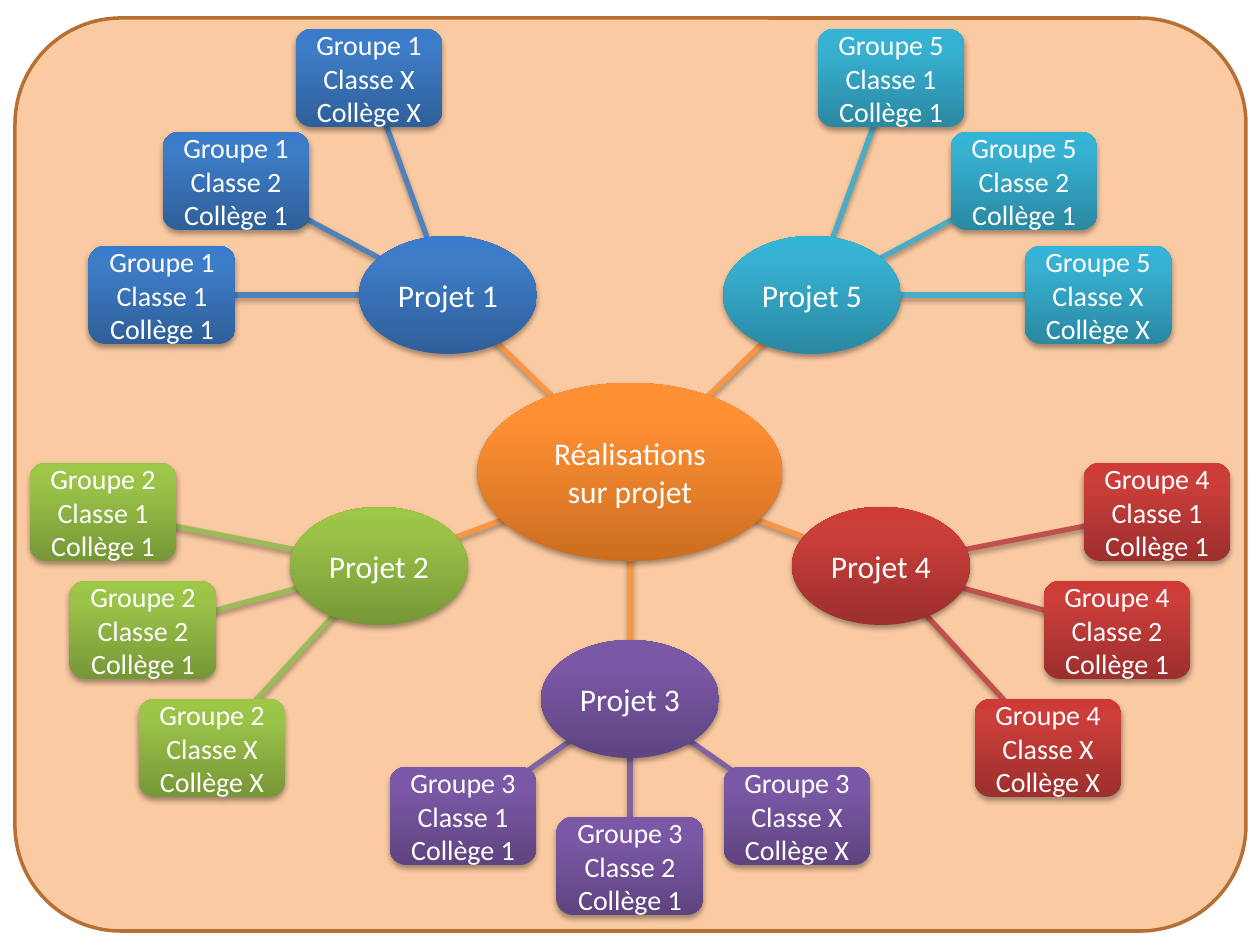
from copy import deepcopy
from lxml.etree import SubElement
from pptx import Presentation
from pptx.dml.color import RGBColor as RGB
from pptx.enum.shapes import MSO_CONNECTOR as LINK, MSO_SHAPE as FORM
from pptx.enum.text import MSO_ANCHOR as ANCHOR, PP_ALIGN as ALIGN
from pptx.oxml.ns import qn
from pptx.util import Pt

PX = 914400 / 126
WIDE, HIGH = 1260, 945
WHITE = RGB(0xFF, 0xFF, 0xFF)
PEACH = RGB(0xF7, 0x96, 0x46)
BROWN = RGB(0xB7, 0x6F, 0x34)
BLUE = (RGB(0x4F, 0x81, 0xBD), RGB(0x2F, 0x5F, 0x99), RGB(0x3D, 0x7C, 0xC7), RGB(0x3A, 0x7C, 0xCB))
GREEN = (RGB(0x9B, 0xBB, 0x59), RGB(0x77, 0x97, 0x37), RGB(0x9B, 0xC3, 0x48), RGB(0x9D, 0xC7, 0x46))
PURPLE = (RGB(0x80, 0x64, 0xA2), RGB(0x5F, 0x44, 0x80), RGB(0x7B, 0x58, 0xA6), RGB(0x7C, 0x57, 0xA8))
RED = (RGB(0xC0, 0x50, 0x4D), RGB(0x9C, 0x2F, 0x2D), RGB(0xCB, 0x3E, 0x3A), RGB(0xCE, 0x3B, 0x37))
TEAL = (RGB(0x4B, 0xAC, 0xC6), RGB(0x2A, 0x88, 0xA2), RGB(0x37, 0xB1, 0xD2), RGB(0x34, 0xB4, 0xD6))
ORANGE = (PEACH, RGB(0xCC, 0x6E, 0x20), RGB(0xFF, 0x90, 0x34), RGB(0xFF, 0x91, 0x36))

HUB = (630, 472)
TOP = [(369, 78), (236, 181), (162, 295)]
SIDE = [(103, 512), (143, 630), (212, 748)]
BASE = [(463, 816), (630, 866), (797, 816)]
PROJECTS = [
    (1, (448, 295), BLUE, TOP, "X21"),
    (2, (379, 566), GREEN, SIDE, "12X"),
    (3, (630, 699), PURPLE, BASE, "12X"),
    (4, (881, 566), RED, [(WIDE - x, y) for x, y in SIDE], "12X"),
    (5, (812, 295), TEAL, [(WIDE - x, y) for x, y in TOP], "12X"),
]

deck = Presentation()
deck.slide_width, deck.slide_height = int(WIDE * PX), int(HIGH * PX)
slide = deck.slides.add_slide(deck.slide_layouts[6])
shapes = slide.shapes


def cast(item):
    effects = SubElement(item._element.spPr, qn("a:effectLst"))
    shade = SubElement(effects, qn("a:outerShdw"), blurRad="40000", dist="23000",
                       dir="5400000", rotWithShape="0")
    black = SubElement(shade, qn("a:srgbClr"), val="000000")
    SubElement(black, qn("a:alpha"), val="35000")


def node(form, spot, size, tones, text, points):
    (x, y), (w, h) = spot, size
    item = shapes.add_shape(form, int((x - w / 2) * PX), int((y - h / 2) * PX),
                            int(w * PX), int(h * PX))
    item.fill.gradient()
    item.fill.gradient_angle = 90
    last = item._element.spPr.findall(".//" + qn("a:gs"))[-1]
    last.addnext(deepcopy(last))
    for stop, place, tone in zip(item.fill.gradient_stops, (0, 0.8, 1), tones[1:]):
        stop.position = place
        stop.color.rgb = tone
    item.line.fill.background()
    cast(item)
    frame = item.text_frame
    frame.text = text
    frame.word_wrap = True
    frame.vertical_anchor = ANCHOR.MIDDLE
    for para in frame.paragraphs:
        para.alignment = ALIGN.CENTER
        para.font.size = Pt(points)
        para.font.name = "Calibri"
        para.font.color.rgb = WHITE


panel = shapes.add_shape(FORM.ROUNDED_RECTANGLE, *[int(v * PX) for v in (15, 18, 1231, 913)])
panel.adjustments[0] = 0.116
panel.shadow.inherit = False
panel.fill.solid()
panel.fill.fore_color.rgb = PEACH
tint = panel._element.spPr.find(qn("a:solidFill")).find(qn("a:srgbClr"))
SubElement(tint, qn("a:alpha"), val="50000")
panel.line.color.rgb = BROWN
panel.line.width = Pt(2)

links = [(spot, end, tones[0]) for _, spot, tones, ends, _ in PROJECTS for end in ends]
links += [(HUB, spot, PEACH) for _, spot, *_ in PROJECTS]
for start, end, tone in links:
    link = shapes.add_connector(LINK.STRAIGHT, *[int(v * PX) for v in start + end])
    link.line.color.rgb = tone
    link.line.width = Pt(3)
    cast(link)

node(FORM.OVAL, HUB, (305, 178), ORANGE, "Réalisations sur projet", 18)
for number, spot, tones, ends, grades in PROJECTS:
    node(FORM.OVAL, spot, (178, 118), tones, f"Projet {number}", 18)
    for end, grade in zip(ends, grades):
        school = "X" if grade == "X" else "1"
        text = f"Groupe {number}\nClasse {grade}\nCollège {school}"
        node(FORM.ROUNDED_RECTANGLE, end, (147, 98), tones, text, 16)

deck.save("out.pptx")
